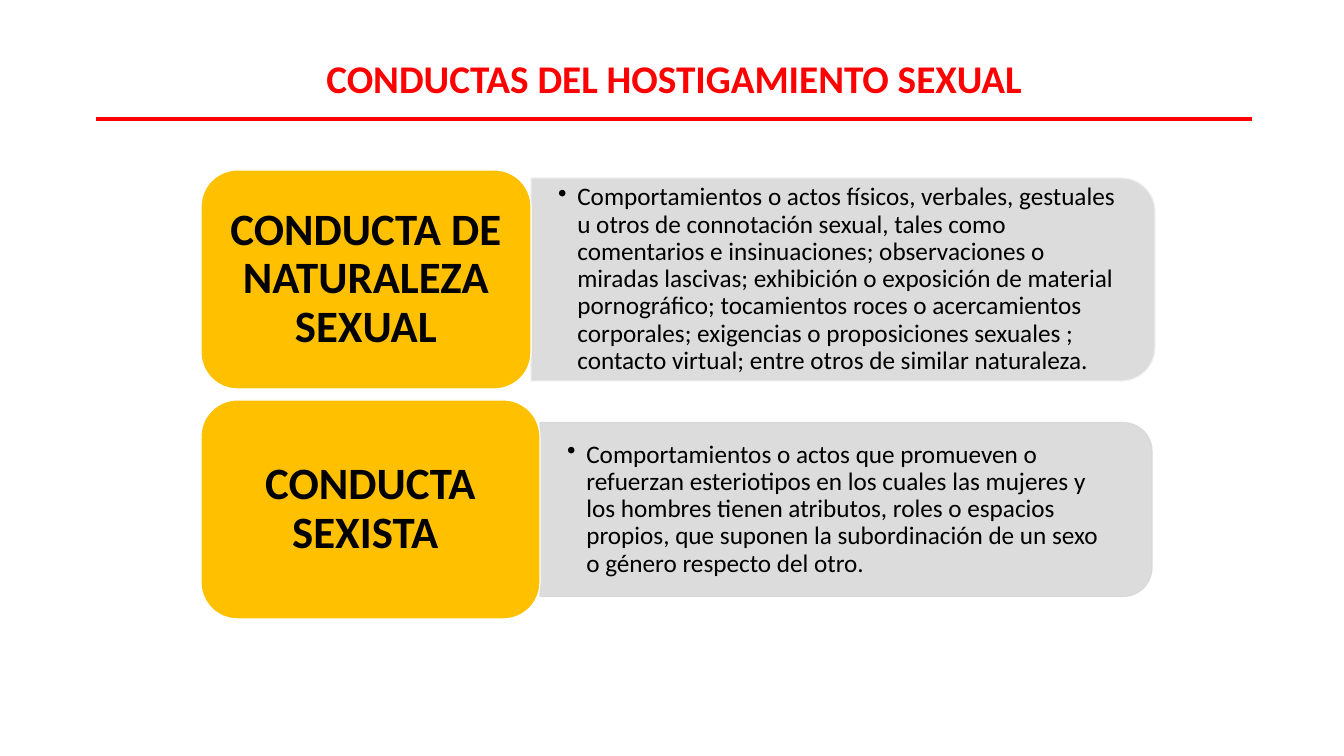
from lxml.etree import SubElement
from pptx import Presentation
from pptx.dml.color import RGBColor
from pptx.enum.shapes import MSO_CONNECTOR, MSO_SHAPE
from pptx.enum.text import MSO_ANCHOR, PP_ALIGN
from pptx.oxml.ns import qn
from pptx.util import Emu, Inches, Pt

# Content
TITLE = "CONDUCTAS DEL HOSTIGAMIENTO SEXUAL"
CONDUCTS = [
    {
        "name": "CONDUCTA DE NATURALEZA SEXUAL",
        "detail": "Comportamientos o actos físicos, verbales, gestuales u otros de "
                  "connotación sexual, tales como comentarios e insinuaciones; "
                  "observaciones o miradas lascivas; exhibición o exposición de "
                  "material pornográfico; tocamientos roces o acercamientos "
                  "corporales; exigencias o proposiciones sexuales ; contacto "
                  "virtual; entre otros de similar naturaleza.",
        "name_width": 330, "panel": (624, 203), "edge": "panel_edge_light",
    },
    {
        "name": "CONDUCTA SEXISTA ",
        "detail": "Comportamientos o actos que promueven o refuerzan esteriotipos en "
                  "los cuales las mujeres y los hombres tienen atributos, roles o "
                  "espacios propios, que suponen la subordinación de un sexo o "
                  "género respecto del otro.",
        "name_width": 339, "panel": (612, 174), "edge": "panel_edge_dark",
    },
]
COLORS = {
    "title": "FF0000", "text": "000000", "name": "FFC000", "name_edge": "FFFFFF",
    "panel": "D9D9D9", "panel_edge_light": "F0F0F0", "panel_edge_dark": "D8D8D8",
}
FONT = "Calibri"

# Layout in px
SLIDE_W, SLIDE_H = 1344, 756
MARGIN, TITLE_TOP, TITLE_H, RULE_Y = 96, 49, 57, 119
NAME_LEFT, NAME_TOP, NAME_H, ROW_STEP = 201, 170, 219, 230
CORNER_INSET = 0.05  # share of the panel height kept clear of its round corners


def px(value):
    return Emu(round(value * 914400 / 100.8))


def color(key):
    return RGBColor.from_string(COLORS[key])


def write(shape, text, size, key="text", bold=False, align=PP_ALIGN.CENTER,
          insets=(0.1, 0.05), anchor=MSO_ANCHOR.MIDDLE, spacing=None, bullet=False):
    frame = shape.text_frame
    frame.word_wrap = True
    frame.vertical_anchor = anchor
    frame.margin_left = frame.margin_right = Inches(insets[0])
    frame.margin_top = frame.margin_bottom = Inches(insets[1])
    paragraph = frame.paragraphs[0]
    paragraph.text = text
    paragraph.alignment = align
    if spacing:
        paragraph.line_spacing = spacing
    if bullet:
        paragraph.level = 1
        properties = paragraph._p.get_or_add_pPr()
        properties.set("marL", str(Inches(0.19)))
        properties.set("indent", str(-Inches(0.19)))
        SubElement(properties, qn("a:buChar"), char="•")
    font = paragraph.font
    font.name, font.size, font.bold = FONT, Pt(size), bold
    font.color.rgb = color(key)


def add_block(shapes, kind, left, top, width, height, fill, edge):
    block = shapes.add_shape(kind, px(left), px(top), px(width), px(height))
    block.shadow.inherit = False
    block.fill.solid()
    block.fill.fore_color.rgb = color(fill)
    block.line.color.rgb = color(edge)
    block.line.width = Pt(0.85)
    return block


def add_panel(shapes, left, middle, width, height, edge):
    # A quarter turn puts the two round corners on the right
    panel = add_block(shapes, MSO_SHAPE.ROUND_2_SAME_RECTANGLE,
                      left + (width - height) / 2, middle - width / 2,
                      height, width, "panel", edge)
    panel.rotation = 90
    for solid in panel._element.spPr.iter(qn("a:solidFill")):
        SubElement(solid[0], qn("a:alpha"), val="90000")


def add_conduct(shapes, row, conduct):
    top = NAME_TOP + row * ROW_STEP
    middle = top + NAME_H / 2
    left = NAME_LEFT + conduct["name_width"]
    width, height = conduct["panel"]
    inset = CORNER_INSET * height

    add_panel(shapes, left, middle, width, height, conduct["edge"])
    detail = shapes.add_textbox(px(left), px(middle - height / 2 + inset),
                                px(width - inset), px(height - 2 * inset))
    write(detail, conduct["detail"], 18, align=PP_ALIGN.LEFT,
          insets=(0.27, 0.14), spacing=0.9, bullet=True)

    name = add_block(shapes, MSO_SHAPE.ROUNDED_RECTANGLE, NAME_LEFT, top,
                     conduct["name_width"], NAME_H, "name", "name_edge")
    write(name, conduct["name"], 32, bold=True, insets=(0.13, 0.07), spacing=0.9)


def main():
    deck = Presentation()
    deck.slide_width, deck.slide_height = px(SLIDE_W), px(SLIDE_H)
    shapes = deck.slides.add_slide(deck.slide_layouts[6]).shapes

    # Title and its rule
    right = SLIDE_W - MARGIN + 4
    rule = shapes.add_connector(MSO_CONNECTOR.STRAIGHT, px(MARGIN), px(RULE_Y),
                                px(right), px(RULE_Y))
    rule.line.color.rgb = color("title")
    rule.line.width = Pt(2.25)
    SubElement(rule._element.spPr, qn("a:effectLst"))
    title = shapes.add_textbox(px(MARGIN), px(TITLE_TOP), px(right - MARGIN), px(TITLE_H))
    write(title, TITLE, 28, "title", bold=True, anchor=MSO_ANCHOR.TOP)

    # One row per kind of conduct
    for row, conduct in enumerate(CONDUCTS):
        add_conduct(shapes, row, conduct)

    deck.save("out.pptx")


if __name__ == "__main__":
    main()
